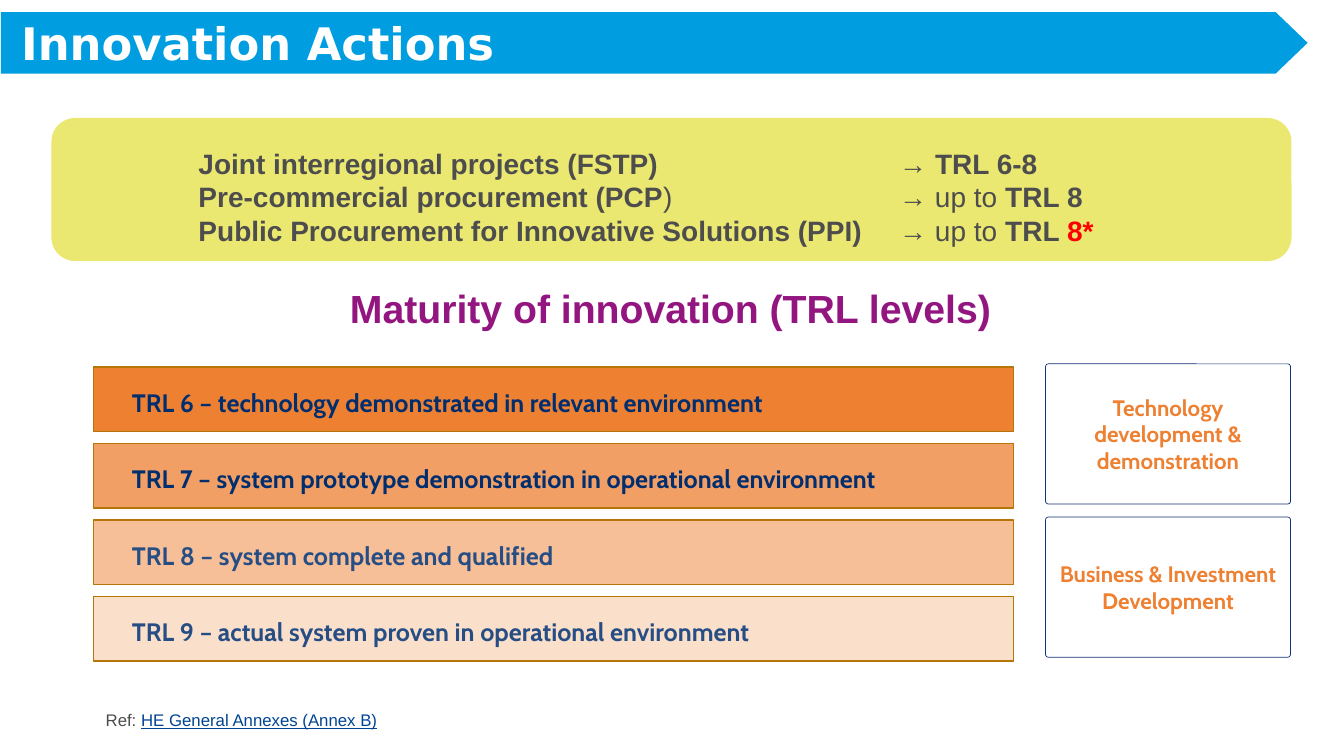
from pptx import Presentation
from pptx.dml.color import RGBColor
from pptx.enum.shapes import MSO_SHAPE
from pptx.enum.text import MSO_ANCHOR, MSO_AUTO_SIZE, PP_ALIGN
from pptx.oxml.ns import qn
from pptx.util import Inches, Pt
from lxml.etree import SubElement


def colour(code):
    """Turn a hex string into a colour."""
    return RGBColor.from_string(code)


class SlideBuilder:
    """Holds the style and the slide, and adds each kind of element."""

    orange = "EE8032"
    grey = "4D4D4D"
    title_font = {"name": "Arial", "size": Pt(28), "bold": True, "colour": "931680"}
    banner_font = {"name": "DejaVu Sans", "size": Pt(32), "bold": True, "colour": "FFFFFF"}
    action_font = {"name": "Arial", "size": Pt(20), "bold": True, "colour": grey}
    level_font = {"name": "Cabin", "size": Pt(18), "bold": True}
    phase_font = {"name": "Cabin", "size": Pt(16), "bold": True, "colour": orange}
    reference_font = {"name": "Arial", "size": Pt(12), "colour": grey}

    def __init__(self, slide):
        """Keep the slide to draw on."""
        self.slide = slide

    def add_runs(self, paragraph, runs, font):
        """Add runs of text, each with its own changes to the font."""
        for text, changes in runs:
            run = paragraph.add_run()
            run.text = text
            for name, value in {**font, **changes}.items():
                if name == "colour":
                    run.font.color.rgb = colour(value)
                else:
                    setattr(run.font, name, value)

    def title(self, text, box):
        """Place and format the title placeholder."""
        shape = self.slide.shapes.title
        for name, value in zip(("left", "top", "width", "height"), box):
            setattr(shape, name, Inches(value))
        frame = shape.text_frame
        settings = {"vertical_anchor": MSO_ANCHOR.BOTTOM, "margin_bottom": 0,
                    "auto_size": MSO_AUTO_SIZE.NONE, "word_wrap": True}
        for name, value in settings.items():
            setattr(frame, name, value)
        paragraph = frame.paragraphs[0]
        paragraph.alignment = PP_ALIGN.CENTER
        paragraph.line_spacing = 0.9
        self.add_runs(paragraph, [(text, {})], self.title_font)

    def panel(self, kind, box, fill, line=None, adjustment=None, opacity=100):
        """Add a filled shape; line is a colour and a width in points."""
        shape = self.slide.shapes.add_shape(kind, *map(Inches, box))
        shape.shadow.inherit = False
        shape.fill.solid()
        shape.fill.fore_color.rgb = colour(fill)
        if opacity < 100:
            fill_colour = shape._element.spPr.find(qn("a:solidFill")).find(qn("a:srgbClr"))
            SubElement(fill_colour, qn("a:alpha"), val=str(opacity * 1000))
        if line:
            shape.line.color.rgb = colour(line[0])
            shape.line.width = Pt(line[1])
        else:
            shape.line.fill.background()
        if adjustment is not None:
            shape.adjustments[0] = adjustment
        return shape

    def label(self, shape, text, font, alignment, margin=0.1):
        """Put one vertically centred label inside a shape."""
        frame = shape.text_frame
        frame.word_wrap = True
        frame.vertical_anchor = MSO_ANCHOR.MIDDLE
        frame.margin_left = Inches(margin)
        paragraph = frame.paragraphs[0]
        paragraph.alignment = alignment
        self.add_runs(paragraph, [(text, {})], font)

    def text(self, box, lines, font, tab=None):
        """Add a text box with one paragraph per line of runs."""
        frame = self.slide.shapes.add_textbox(*map(Inches, box)).text_frame
        frame.word_wrap = True
        for index, runs in enumerate(lines):
            paragraph = frame.add_paragraph() if index else frame.paragraphs[0]
            if tab:
                tabs = SubElement(paragraph._p.get_or_add_pPr(), qn("a:tabLst"))
                SubElement(tabs, qn("a:tab"), pos=str(Inches(tab)), algn="l")
            self.add_runs(paragraph, runs, font)


def main():
    """Build the slide and save it."""
    presentation = Presentation()
    presentation.slide_width = Inches(13.33)
    presentation.slide_height = Inches(7.5)
    builder = SlideBuilder(presentation.slides.add_slide(presentation.slide_layouts[5]))

    builder.title("Maturity of innovation (TRL levels)", (0.9, 2.77, 11.5, 0.52))
    builder.panel(MSO_SHAPE.ROUNDED_RECTANGLE, (0.51, 1.17, 12.3, 1.42), "EBE872")

    phases = ["Technology development & demonstration", "Business & Investment Development"]
    for index, phase in enumerate(phases):
        box = (10.37, 3.61 + 1.52 * index, 2.43, 1.39)
        shape = builder.panel(MSO_SHAPE.ROUNDED_RECTANGLE, box, "FFFFFF", ("133176", 0.5), 0.02)
        builder.label(shape, phase, builder.phase_font, PP_ALIGN.CENTER)

    levels = [
        ("TRL 6 – technology demonstrated in relevant environment", 100, "002E6E"),
        ("TRL 7 – system prototype demonstration in operational environment", 75, "002E6E"),
        ("TRL 8 – system complete and qualified", 50, "264E84"),
        ("TRL 9 – actual system proven in operational environment", 25, "264E84"),
    ]
    for index, (level, opacity, text_colour) in enumerate(levels):
        top = 3.64 + 0.76 * index
        builder.panel(MSO_SHAPE.RECTANGLE, (0.93, top, 9.12, 0.64), builder.orange,
                      ("B47509", 1), opacity=opacity)
        builder.text((1.21, top + 0.15, 8.51, 0.4), [[(level, {"colour": text_colour})]],
                     builder.level_font)

    reference = [("Ref: ", {}),
                 ("HE General Annexes (Annex B)", {"colour": "004494", "underline": True})]
    builder.text((0.95, 6.99, 5.26, 0.3), [reference], builder.reference_font)

    plain = {"bold": False}
    actions = [
        [("Joint interregional projects (FSTP)", {}), ("\t→ ", plain), ("TRL 6-8", {})],
        [("Pre-commercial procurement (PCP", {}), (")\t→ up to ", plain), ("TRL 8", {})],
        [("Public Procurement for Innovative Solutions (PPI)", {}), ("\t→ up to ", plain),
         ("TRL ", {}), ("8*", {"colour": "FF0000"})],
    ]
    builder.text((1.87, 1.4, 11.4, 1.11), actions, builder.action_font, tab=6.95)

    banner = builder.panel(MSO_SHAPE.PENTAGON, (0.01, 0.12, 12.96, 0.61), "009EE0",
                           adjustment=0.52)
    builder.label(banner, "Innovation Actions", builder.banner_font, PP_ALIGN.LEFT, 0.2)

    presentation.save("out.pptx")


if __name__ == "__main__":
    main()
